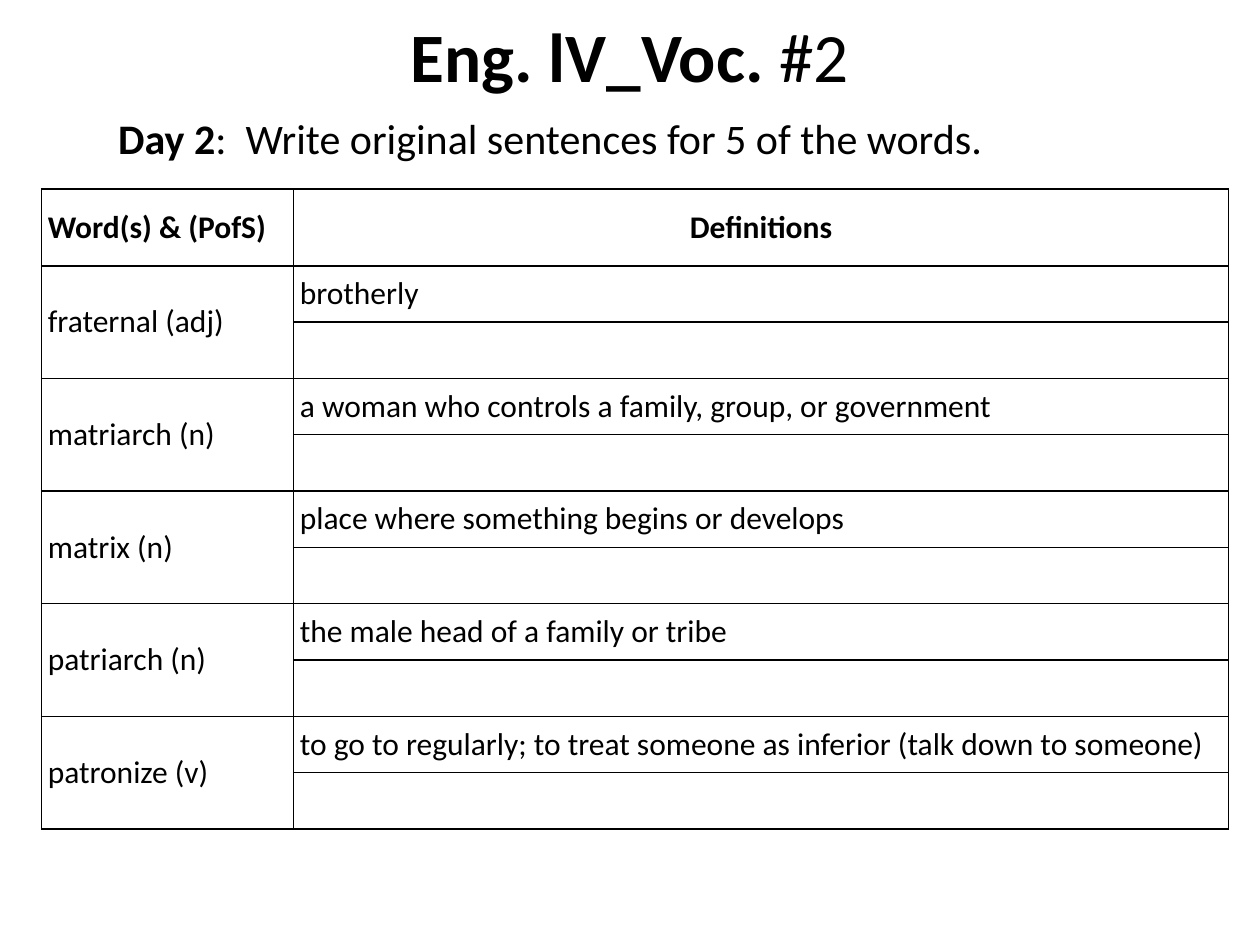
from pptx import Presentation
from pptx.dml.color import RGBColor
from pptx.enum.text import MSO_ANCHOR, PP_ALIGN
from pptx.oxml import parse_xml
from pptx.oxml.ns import nsdecls
from pptx.util import Inches, Pt

BLACK = RGBColor(0x00, 0x00, 0x00)
FONT = "Calibri"
MIDDLE, TOP = MSO_ANCHOR.MIDDLE, MSO_ANCHOR.TOP
LEFT, CENTER = PP_ALIGN.LEFT, PP_ALIGN.CENTER
HEADINGS = (("Word(s) & (PofS)", LEFT), ("Definitions", CENTER))
VOCABULARY = (
    ("fraternal (adj)", "brotherly"),
    ("matriarch (n)", "a woman who controls a family, group, or government"),
    ("matrix (n)", "place where something begins or develops"),
    ("patriarch (n)", "the male head of a family or tribe"),
    ("patronize (v)",
     "to go to regularly; to treat someone as inferior (talk down to someone)"),
)
COLUMN_WIDTHS = (2, 7.42)
TABLE_HEIGHT, HEADER_HEIGHT = 5.08, 0.61


def style_paragraph(paragraph, size, alignment):
    """Set the font and alignment of a paragraph."""
    paragraph.alignment = alignment
    paragraph.font.name = FONT
    paragraph.font.size = Pt(size)
    paragraph.font.color.rgb = BLACK


def add_run(paragraph, text, bold):
    """Add a bold or plain run to a paragraph."""
    run = paragraph.add_run()
    run.text = text
    run.font.bold = bold


def add_line_of_text(slide, box, bold_text, plain_text, size, alignment, anchor):
    """Add a text box whose line starts bold and ends plain."""
    shape = slide.shapes.add_textbox(*map(Inches, box))
    frame = shape.text_frame
    frame.word_wrap = True
    frame.vertical_anchor = anchor
    paragraph = frame.paragraphs[0]
    style_paragraph(paragraph, size, alignment)
    add_run(paragraph, bold_text, True)
    add_run(paragraph, plain_text, False)


def style_cell(cell):
    """Give a cell its margins, thin black borders and no fill."""
    cell.vertical_anchor = MIDDLE
    cell.margin_left = cell.margin_right = Inches(0.05)
    cell.margin_top = cell.margin_bottom = 0
    properties = cell._tc.get_or_add_tcPr()
    for side in ("lnL", "lnR", "lnT", "lnB"):
        properties.append(parse_xml(
            f'<a:{side} {nsdecls("a")} w="{Pt(1)}"><a:solidFill>'
            f'<a:srgbClr val="{BLACK}"/></a:solidFill></a:{side}>'))
    cell.fill.background()


def write_cell(cell, text, bold=False, alignment=LEFT):
    """Write one line of text in a cell."""
    paragraph = cell.text_frame.paragraphs[0]
    style_paragraph(paragraph, 18, alignment)
    add_run(paragraph, text, bold)


def add_vocabulary_table(slide):
    """Add the table with a definition row and a writing row for each word."""
    row_count = 1 + 2 * len(VOCABULARY)
    row_height = (TABLE_HEIGHT - HEADER_HEIGHT) / (row_count - 1)
    table = slide.shapes.add_table(
        row_count, len(COLUMN_WIDTHS), Inches(0.33), Inches(1.5),
        Inches(sum(COLUMN_WIDTHS)), Inches(TABLE_HEIGHT)).table
    table.first_row = False
    table.horz_banding = False
    for column, width in zip(table.columns, COLUMN_WIDTHS):
        column.width = Inches(width)
    for index, row in enumerate(table.rows):
        row.height = Inches(row_height if index else HEADER_HEIGHT)
        for cell in row.cells:
            style_cell(cell)
    for column, (heading, alignment) in enumerate(HEADINGS):
        write_cell(table.cell(0, column), heading, True, alignment)
    for index, (word, definition) in enumerate(VOCABULARY):
        row = 1 + 2 * index
        table.cell(row, 0).merge(table.cell(row + 1, 0))
        write_cell(table.cell(row, 0), word)
        write_cell(table.cell(row, 1), definition)


def main():
    """Build the vocabulary slide and save it."""
    presentation = Presentation()
    presentation.slide_width = Inches(10)
    presentation.slide_height = Inches(7.5)
    slide = presentation.slides.add_slide(presentation.slide_layouts[6])
    add_line_of_text(slide, (0.5, 0, 9, 0.87), "Eng. lV_Voc. ", "#2",
                     39.6, CENTER, MIDDLE)
    add_line_of_text(slide, (0.84, 0.84, 9, 0.67), "Day 2",
                     ":  Write original sentences for 5 of the words.",
                     24, LEFT, TOP)
    add_vocabulary_table(slide)
    presentation.save("out.pptx")


if __name__ == "__main__":
    main()
